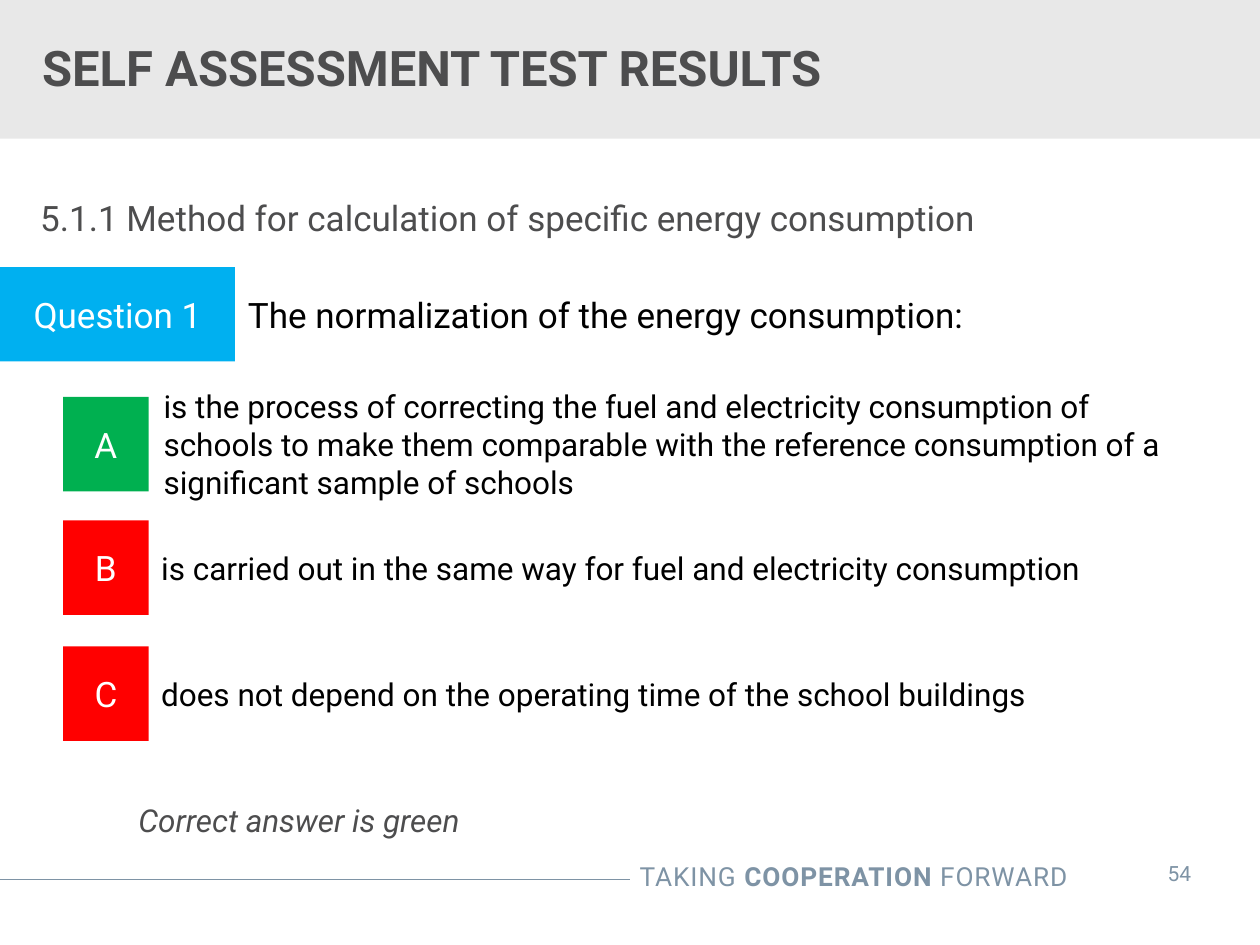
from dataclasses import dataclass

from lxml import etree
from pptx import Presentation
from pptx.dml.color import RGBColor
from pptx.enum import shapes, text
from pptx.oxml.ns import qn
from pptx.util import Pt


@dataclass(frozen=True)
class Theme:
    face: str = "Roboto"
    band: str = "E8E8E8"
    gray: str = "4D4D4E"
    slate: str = "7E93A5"
    blue: str = "00B0F0"
    green: str = "00B050"
    red: str = "FF0000"
    white: str = "FFFFFF"
    black: str = "000000"
    title: int = 28
    head: int = 20
    text: int = 18
    foot: int = 15
    page: int = 12


theme = Theme()
left, mid, right = (text.PP_ALIGN.LEFT, text.PP_ALIGN.CENTER, text.PP_ALIGN.RIGHT)


def write(para, words, size, color, align=left, bold=False, italic=False, track=0):
    """Add one formatted run to a paragraph."""
    para.alignment = align
    run = para.add_run()
    run.text = words
    font = run.font
    font.name, font.size = theme.face, Pt(size)
    font.bold, font.italic = bold, italic
    font.color.rgb = RGBColor.from_string(color)
    if track:
        run._r.get_or_add_rPr().set("spc", str(track))


def block(x, y, wide, high, fill=None):
    """Add a filled box, or a plain text box, and return it with its text frame."""
    area = Pt(x), Pt(y), Pt(wide), Pt(high)
    if fill:
        shape = slide.shapes.add_shape(shapes.MSO_SHAPE.RECTANGLE, *area)
        shape.shadow.inherit = False
        shape.fill.solid()
        shape.fill.fore_color.rgb = RGBColor.from_string(fill)
        shape.line.fill.background()
    else:
        shape = slide.shapes.add_textbox(*area)
    frame = shape.text_frame
    frame.word_wrap = True
    frame.vertical_anchor = text.MSO_ANCHOR.MIDDLE
    return shape, frame


deck = Presentation()
deck.slide_width, deck.slide_height = Pt(720), Pt(540)
slide = deck.slides.add_slide(deck.slide_layouts[1])

# Title band, sent behind the title
band, _ = block(0, 0, 720, 79.2, theme.band)
slide.shapes._spTree.insert(2, band._element)

# Title
title = slide.shapes.title
title.left, title.top, title.width, title.height = Pt(0), Pt(11.5), Pt(518), Pt(54)
frame = title.text_frame
frame.auto_size = text.MSO_AUTO_SIZE.NONE
frame.vertical_anchor = text.MSO_ANCHOR.MIDDLE
frame.margin_left = Pt(24)
write(frame.paragraphs[0], "SELF ASSESSMENT TEST RESULTS",
      theme.title, theme.gray, bold=True)

# Section heading and closing note share the body
body = slide.placeholders[1]
body.left, body.top, body.width, body.height = Pt(23), Pt(112), Pt(674), Pt(24.5)
frame = body.text_frame
frame.auto_size = text.MSO_AUTO_SIZE.NONE
frame.margin_left = frame.margin_right = frame.margin_top = frame.margin_bottom = 0
head, note = frame.paragraphs[0], frame.add_paragraph()
for para, inset, gap in ((head, 0, 0), (note, 56, 322)):
    props = para._p.get_or_add_pPr()
    props.set("marL", str(Pt(inset)))
    props.set("indent", "0")
    etree.SubElement(props, qn("a:buNone"))
    para.space_before = Pt(gap)
write(head, "5.1.1 Method for calculation of specific energy consumption",
      theme.head, theme.gray)
write(note, "Correct answer is green", theme.text, theme.gray, italic=True)

# Question and answers: label box, then its text
high = 54
rows = (
    (0, 152.6, 134.3, 134.6, theme.blue, "Question 1", theme.head,
     "The normalization of the energy consumption:"),
    (36, 226.8, 49, 86.4, theme.green, "A", theme.text,
     "is the process of correcting the fuel and electricity consumption of "
     "schools to make them comparable with the reference consumption of a "
     "significant sample of schools"),
    (36, 297.4, 49, 85, theme.red, "B", theme.text,
     "is carried out in the same way for fuel and electricity consumption"),
    (36, 369.4, 49, 85, theme.red, "C", theme.text,
     "does not depend on the operating time of the school buildings"),
)
for x, y, wide, start, fill, label, size, words in rows:
    _, frame = block(x, y, wide, high, fill)
    write(frame.paragraphs[0], label, theme.head, theme.white, mid)
    _, frame = block(start, y, 585, high)
    write(frame.paragraphs[0], words, size, theme.black)

# Footer rule
rule = slide.shapes.add_connector(
    shapes.MSO_CONNECTOR.STRAIGHT, Pt(0), Pt(502.6), Pt(360), Pt(502.6))
rule.line.color.rgb = RGBColor.from_string(theme.slate)
rule.line.width = Pt(0.75)
etree.SubElement(rule._element.spPr, qn("a:effectLst"))

# Footer motto
_, frame = block(279.4, 488.2, 337.7, 25.2)
for words, bold in (("TAKING ", False), ("COOPERATION", True), (" FORWARD", False)):
    write(frame.paragraphs[0], words, theme.foot, theme.slate, right, bold, track=50)

# Page number
_, frame = block(647.3, 484.6, 53.3, 28.8)
frame.word_wrap = False
write(frame.paragraphs[0], "54", theme.page, theme.slate, mid)

deck.save("out.pptx")
